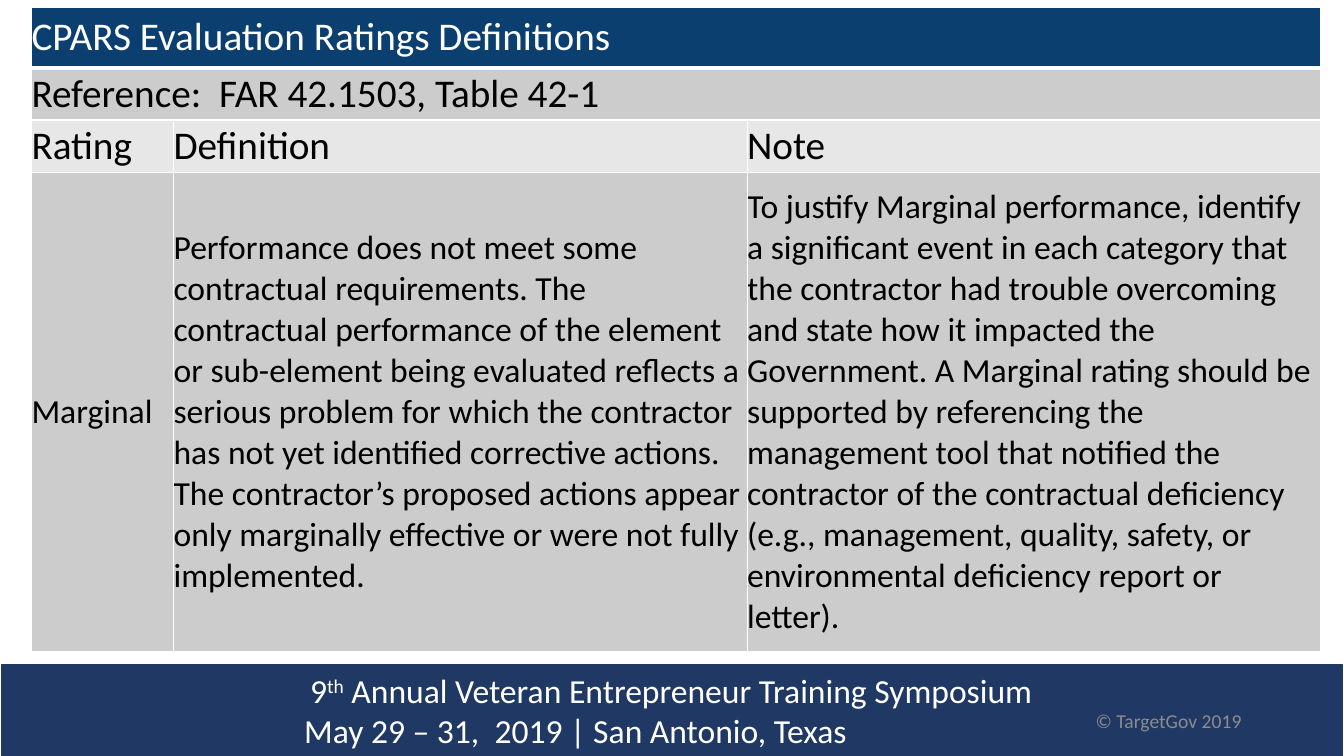
import pptx
import pptx.util
import pptx.dml.color
import pptx.enum.shapes
import pptx.enum.text
import pptx.oxml
import lxml.etree

Pt = pptx.util.Pt
MIDDLE = pptx.enum.text.MSO_ANCHOR.MIDDLE
FONT = "Calibri"
COLORS = {
    "white": "FFFFFF",
    "black": "000000",
    "header": "0A3F70",
    "band": "CCCCCC",
    "light": "E7E7E7",
    "footer": "203864",
    "credit": "8C8C8C",
}
COLUMN_WIDTHS = [101.5, 409.7, 409.7]
ROWS = [
    (43.2, "header", "white", 28, ["CPARS Evaluation Ratings Definitions"]),
    (37.4, "band", "black", 28, ["Reference:  FAR 42.1503, Table 42-1"]),
    (37.4, "light", "black", 28, ["Rating", "Definition", "Note"]),
    (342, "band", "black", 24, [
        "Marginal",
        "Performance does not meet some contractual requirements. "
        "The contractual performance of the element or sub-element being "
        "evaluated reflects a serious problem for which the contractor has "
        "not yet identified corrective actions. The contractor’s proposed "
        "actions appear only marginally effective or were not fully "
        "implemented.",
        "To justify Marginal performance, identify a significant event in "
        "each category that the contractor had trouble overcoming and state "
        "how it impacted the Government. A Marginal rating should be "
        "supported by referencing the management tool that notified the "
        "contractor of the contractual deficiency (e.g., management, "
        "quality, safety, or environmental deficiency report or letter).",
    ]),
]
FOOTER_LINES = [
    (220, [("9", 0), ("th", 30000),
           (" Annual Veteran Entrepreneur Training Symposium", 0)]),
    (215.7, [("May 29 – 31,  2019 | San Antonio, Texas", 0)]),
]


def rgb(name):
    return pptx.dml.color.RGBColor.from_string(COLORS[name])


def add_span(para, text, size, color):
    span = para.add_run()
    span.text = text
    span.font.name = FONT
    span.font.size = Pt(size)
    span.font.color.rgb = rgb(color)
    return span


def clear_margins(target):
    target.margin_left = target.margin_right = 0
    target.margin_top = target.margin_bottom = 0
    target.vertical_anchor = MIDDLE


def set_borders(cell, bottom_width):
    properties = cell._tc.get_or_add_tcPr()
    widths = [("lnL", 1), ("lnR", 1), ("lnT", 1), ("lnB", bottom_width)]
    for position, (side, width) in enumerate(widths):
        line = pptx.oxml.parse_xml(
            f'<a:{side} xmlns:a="http://schemas.openxmlformats.org/drawingml/2006/main" '
            f'w="{Pt(width)}"><a:solidFill><a:srgbClr val="{COLORS["white"]}"/>'
            f'</a:solidFill></a:{side}>')
        properties.insert(position, line)


def add_ratings_table(page, left, top):
    height = sum(row[0] for row in ROWS)
    frame = page.shapes.add_table(
        len(ROWS), len(COLUMN_WIDTHS), Pt(left), Pt(top),
        Pt(sum(COLUMN_WIDTHS)), Pt(height))
    table = frame.table
    table.first_row = table.horz_banding = False
    for column, width in zip(table.columns, COLUMN_WIDTHS):
        column.width = Pt(width)
    for index, (row_height, fill, color, size, texts) in enumerate(ROWS):
        row = table.rows[index]
        row.height = Pt(row_height)
        for cell in row.cells:
            clear_margins(cell)
            cell.fill.solid()
            cell.fill.fore_color.rgb = rgb(fill)
            set_borders(cell, 3 if index == 0 else 1)
        if len(texts) == 1:
            row.cells[0].merge(row.cells[len(COLUMN_WIDTHS) - 1])
        for cell, text in zip(row.cells, texts):
            add_span(cell.text_frame.paragraphs[0], text, size, color)


def add_footer(page, left, top, width, height):
    band = page.shapes.add_shape(
        pptx.enum.shapes.MSO_SHAPE.RECTANGLE,
        Pt(left), Pt(top), Pt(width), Pt(height))
    band.shadow.inherit = False
    band.fill.solid()
    band.fill.fore_color.rgb = rgb("footer")
    band.line.color.rgb = rgb("footer")
    band.line.width = Pt(1)
    frame = band.text_frame
    frame.word_wrap = True
    clear_margins(frame)
    for index, (indent, spans) in enumerate(FOOTER_LINES):
        para = frame.add_paragraph() if index else frame.paragraphs[0]
        para.alignment = pptx.enum.text.PP_ALIGN.LEFT
        para._p.get_or_add_pPr().set("marL", str(Pt(indent)))
        for text, baseline in spans:
            span = add_span(para, text, 24, "white")
            if baseline:
                span.font._element.set("baseline", str(baseline))

    credit = page.shapes.add_textbox(
        Pt(left + 774), Pt(top + 28.8), Pt(160), Pt(23))
    credit.text_frame.word_wrap = True
    credit.text_frame.vertical_anchor = MIDDLE
    add_span(credit.text_frame.paragraphs[0], "© TargetGov 2019", 14, "credit")


def main():
    deck = pptx.Presentation()
    deck.slide_width = Pt(960)
    deck.slide_height = Pt(540)
    page = deck.slides.add_slide(deck.slide_layouts[6])
    add_footer(page, 1.5, 474.5, 957, 65.5)
    add_ratings_table(page, 22.5, 5.2)
    deck.save("out.pptx")


if __name__ == "__main__":
    main()
